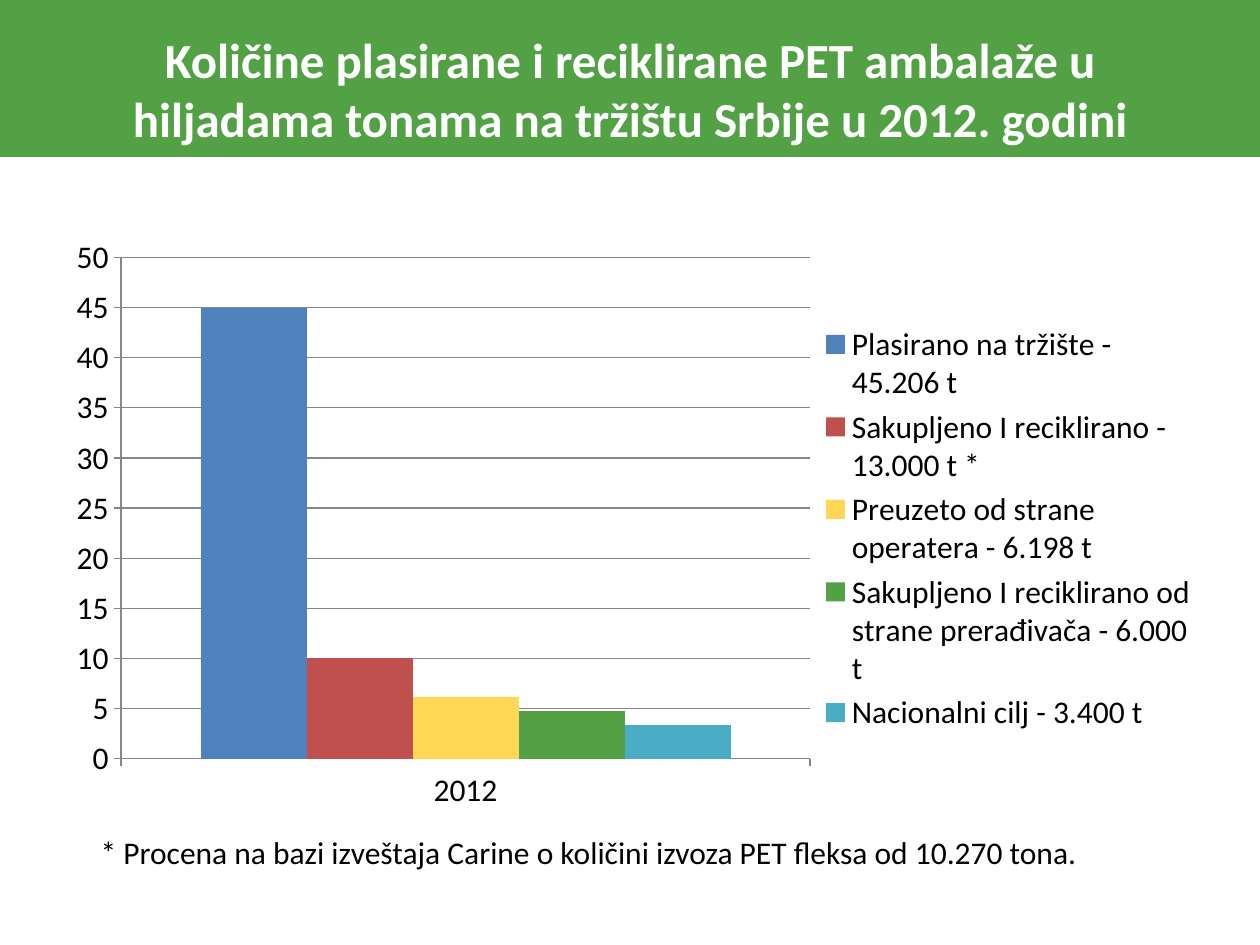
from dataclasses import dataclass
from typing import NamedTuple

from lxml.etree import SubElement
from pptx import Presentation
from pptx.chart.data import CategoryChartData as Data
from pptx.dml.color import RGBColor as Rgb
from pptx.enum.chart import XL_CHART_TYPE as Kind, XL_LEGEND_POSITION as Side, XL_TICK_MARK as Tick
from pptx.enum.shapes import MSO_SHAPE as Form
from pptx.enum.text import MSO_ANCHOR as Anchor, MSO_AUTO_SIZE as Fit, PP_ALIGN as Align
from pptx.oxml.ns import qn
from pptx.util import Pt


@dataclass(frozen=True)
class Theme:
    face: str = "Calibri"
    green: str = "52A145"
    white: str = "FFFFFF"
    black: str = "000000"
    grid: str = "868686"
    head: int = 28
    body: int = 18


class Box(NamedTuple):
    left: float
    top: float
    width: float
    height: float

    def span(self) -> tuple:
        return tuple(Pt(n) for n in self)


class Bar(NamedTuple):
    name: str
    value: float
    color: str


THEME = Theme()
BAND = Box(0, 0, 720, 88.56)
HEAD = Box(36, 11.5, 648, 78.5)
CHART = Box(28, 126, 664, 352)
NOTE = Box(50.4, 472.3, 596.2, 29)
PLOT = {"x": 0.062, "y": 0.06, "w": 0.593, "h": 0.814}
BARS = [
    Bar("Plasirano na tržište - 45.206 t", 45, "4F81BD"),
    Bar("Sakupljeno I reciklirano - 13.000 t *", 10, "C0504D"),
    Bar("Preuzeto od strane operatera - 6.198 t", 6.2, "FFD757"),
    Bar("Sakupljeno I reciklirano od strane prerađivača - 6.000 t", 4.8, THEME.green),
    Bar("Nacionalni cilj - 3.400 t", 3.4, "4BACC6"),
]


def style(font, size: int, color: str, bold: bool = False) -> None:
    font.name, font.size, font.bold = THEME.face, Pt(size), bold
    font.color.rgb = Rgb.from_string(color)


def add_run(para, text: str, size: int, color: str, bold: bool = False) -> None:
    run = para.add_run()
    run.text = text
    style(run.font, size, color, bold)


def add_band(slide, box: Box) -> None:
    """Draw the title band and send it behind the title."""
    band = slide.shapes.add_shape(Form.RECTANGLE, *box.span())
    band.shadow.inherit = False
    band.fill.solid()
    band.fill.fore_color.rgb = band.line.color.rgb = Rgb.from_string(THEME.green)
    band.line.width = Pt(2)
    slide.shapes.title._element.addprevious(band._element)


def set_head(slide, box: Box) -> None:
    head = slide.shapes.title
    head.left, head.top, head.width, head.height = box.span()
    frame = head.text_frame
    frame.auto_size, frame.word_wrap = Fit.NONE, True
    frame.vertical_anchor = Anchor.MIDDLE
    para = frame.paragraphs[0]
    para.alignment = Align.CENTER
    add_run(para, "Količine plasirane i reciklirane PET ambalaže u hiljadama tonama "
            "na tržištu Srbije u 2012. godini", THEME.head, THEME.white, True)


def place_plot(chart) -> None:
    """Fix the inner plot area as fractions of the chart."""
    area = chart._chartSpace.chart.plotArea
    old = area.find(qn("c:layout"))
    if old is not None:
        area.remove(old)
    layout = SubElement(area, qn("c:layout"))
    area.insert(0, layout)
    manual = SubElement(layout, qn("c:manualLayout"))
    parts = {"layoutTarget": "inner", "xMode": "edge", "yMode": "edge", **PLOT}
    for tag, value in parts.items():
        SubElement(manual, qn(f"c:{tag}")).set("val", str(value))


def set_line(line) -> None:
    line.color.rgb = Rgb.from_string(THEME.grid)
    line.width = Pt(0.75)


def add_bars(slide, box: Box, bars: list[Bar]) -> None:
    data = Data()
    data.categories = ["2012"]
    for bar in bars:
        data.add_series(bar.name, [bar.value])
    chart = slide.shapes.add_chart(Kind.COLUMN_CLUSTERED, *box.span(), data).chart
    chart.has_title = False
    style(chart.font, THEME.body, THEME.black)
    chart.has_legend = True
    chart.legend.position = Side.RIGHT
    chart.legend.include_in_layout = False
    plot = chart.plots[0]
    plot.vary_by_categories = False
    plot.gap_width, plot.overlap = 150, 0
    for series, bar in zip(plot.series, bars):
        series.format.fill.solid()
        series.format.fill.fore_color.rgb = Rgb.from_string(bar.color)
    for axis in (chart.category_axis, chart.value_axis):
        axis.major_tick_mark, axis.minor_tick_mark = Tick.OUTSIDE, Tick.NONE
        set_line(axis.format.line)
    scale = chart.value_axis
    scale.minimum_scale, scale.maximum_scale, scale.major_unit = 0, 50, 5
    scale.has_major_gridlines = True
    set_line(scale.major_gridlines.format.line)
    place_plot(chart)


def add_note(slide, box: Box) -> None:
    frame = slide.shapes.add_textbox(*box.span()).text_frame
    frame.word_wrap, frame.auto_size = True, Fit.SHAPE_TO_FIT_TEXT
    add_run(frame.paragraphs[0], "* Procena na bazi izveštaja Carine o količini izvoza "
            "PET fleksa od 10.270 tona.", THEME.body, THEME.black)


def main() -> None:
    deck = Presentation()
    deck.slide_width, deck.slide_height = Pt(720), Pt(540)
    slide = deck.slides.add_slide(deck.slide_layouts.get_by_name("Title Only"))
    add_band(slide, BAND)
    set_head(slide, HEAD)
    add_bars(slide, CHART, BARS)
    add_note(slide, NOTE)
    deck.save("out.pptx")


if __name__ == "__main__":
    main()
